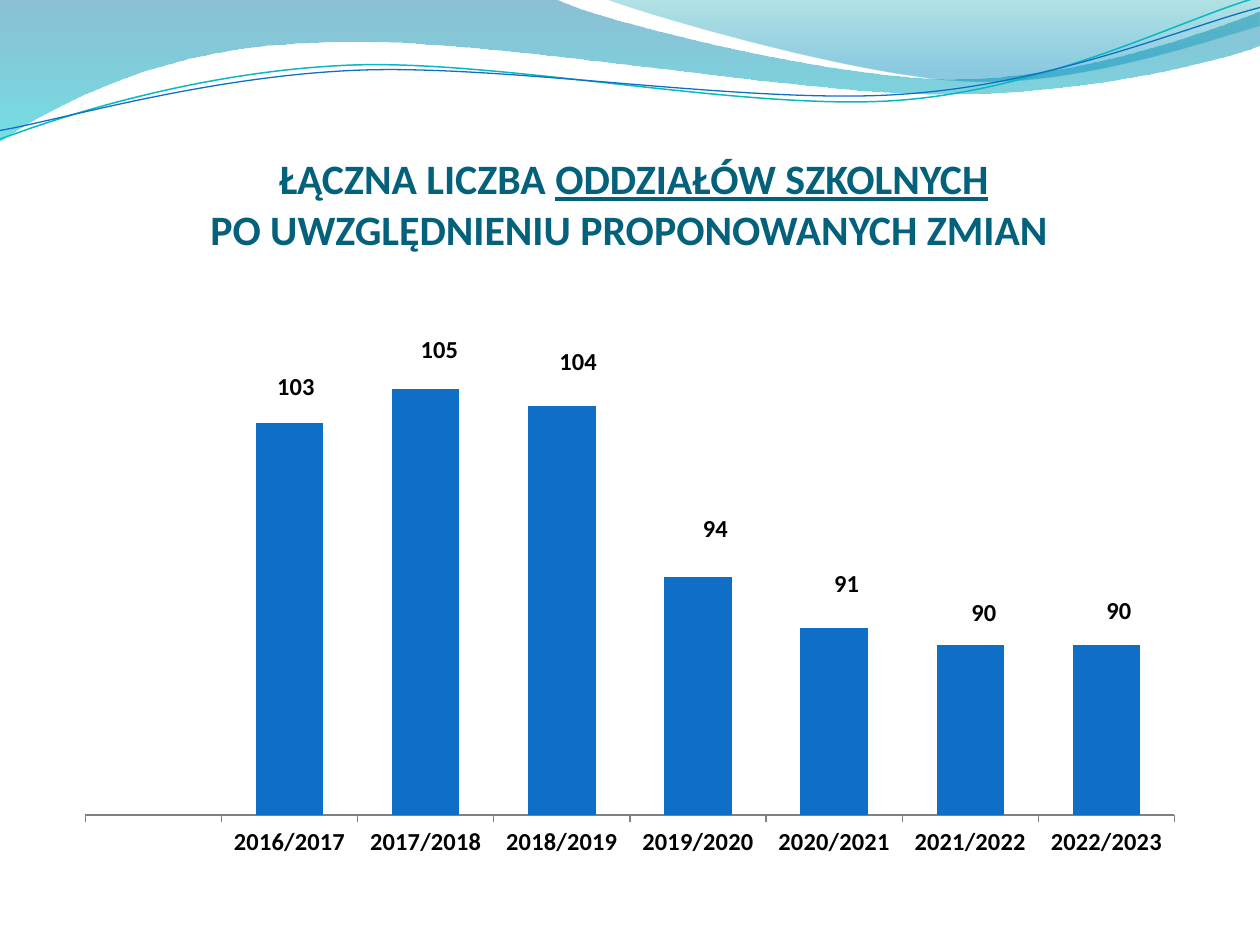
"""Build the slide with the column chart of school class counts."""
import math

from lxml import etree
from pptx import Presentation
from pptx import util as u
from pptx.chart.data import CategoryChartData
from pptx.dml.color import RGBColor
from pptx.enum import chart as ch, text
from pptx.oxml import parse_xml
from pptx.oxml.ns import nsdecls, qn


def rgb(value):
    return RGBColor.from_string(value)


def add_curve(s, points, steps, close=False):
    """Draw an outline; each step takes one point (line) or three (cubic curve)."""
    emu = [(u.Inches(x), u.Inches(y)) for x, y in points]
    builder = s.shapes.build_freeform(*emu[0])
    builder.add_line_segments(emu[1:], close=close)
    sp = builder.convert_to_shape()
    sp.shadow.inherit = False
    segments = list(sp._element.spPr.iter(qn("a:lnTo")))
    for step in steps:
        group, segments = segments[:step], segments[step:]
        if step == 3:
            cubic = etree.Element(qn("a:cubicBezTo"))
            group[0].addprevious(cubic)
            for segment in group:
                cubic.append(segment[0])
                segment.getparent().remove(segment)
    return sp


prs = Presentation()
prs.slide_width, prs.slide_height = u.Inches(10.04), u.Inches(7.5)
s = prs.slides.add_slide(prs.slide_layouts[5])

waves = [
    ([(0, 0), (4.42, -0.01), (4.78, 0.17), (6.66, 0.63), (7.61, 0.63),
      (8.57, 0.63), (9.62, 0.26), (10.04, 0.09), (10.05, 0.36),
      (9.87, 0.44), (8.73, 0.76), (7.49, 0.75), (6.24, 0.75), (3.83, 0.28), (2.58, 0.34),
      (1.3, 0.36), (0.46, 0.83), (-0.01, 1.13), (0, 0)],
     (1, 3, 3, 1, 3, 3, 3, 1), [(0, "0074A1", 45), (1, "00C6CF", 55)]),
    ([(4.81, -0.01), (5.11, 0.11), (6.85, 0.62), (7.72, 0.65),
      (8.59, 0.69), (9.65, 0.32), (10.04, 0.21), (10.04, 0), (4.81, -0.01)],
     (3, 3, 1, 1), [(0, "00A1A9", 30), (0.8, "008BBF", 45)]),
]
for points, steps, stops in waves:
    sp = add_curve(s, points[:-1], steps[:-1], close=True)
    sp.line.fill.background()
    sp.fill.gradient()
    sp.fill.gradient_angle = 270
    for stop, (position, color, _) in zip(sp.fill.gradient_stops, stops):
        stop.position = position
        stop.color.rgb = rgb(color)
    for clr, (_, _, opacity) in zip(sp._element.spPr.iter(qn("a:srgbClr")), stops):
        etree.SubElement(clr, qn("a:alpha")).set("val", str(opacity * 1000))

tilt = 2.7
cos, sin = math.cos(math.radians(tilt)), math.sin(math.radians(tilt))
lines = [
    ([(0, 1.11), (0.48, 0.93), (1.58, 0.57), (2.78, 0.52), (3.97, 0.47), (5.95, 0.89),
      (7.16, 0.8), (8.36, 0.71), (9.42, 0.15), (10.02, -0.02)], (5.01, 0.58), "0AB8BF", 0.85),
    ([(0, 1.04), (0.47, 0.96), (1.64, 0.61), (2.84, 0.56), (4.04, 0.51), (6, 0.84),
      (7.2, 0.75), (8.4, 0.67), (9.45, 0.21), (10.04, 0.06)], (5.02, 0.59), "0F6FC6", 0.75),
]
for points, (cx, cy), color, width in lines:
    level = [(cx + (x - cx) * cos - (y - cy) * sin, cy + (x - cx) * sin + (y - cy) * cos)
             for x, y in points]
    sp = add_curve(s, level, (3, 3, 3))
    sp.rotation = 360 - tilt
    sp.fill.background()
    sp.line.color.rgb = rgb(color)
    sp.line.width = u.Pt(width)

title = s.shapes.title
s.shapes._spTree.append(title._element)
title.left, title.top = u.Inches(0.53), u.Inches(0.92)
title.width, title.height = u.Inches(9.04), u.Inches(1.1)
tf = title.text_frame
tf.word_wrap = True
tf.auto_size = text.MSO_AUTO_SIZE.NONE
tf.vertical_anchor = text.MSO_ANCHOR.BOTTOM
tf.margin_left = tf.margin_right = tf.margin_bottom = 0
tf.margin_top = u.Inches(0.05)
p = tf.paragraphs[0]
p.alignment = text.PP_ALIGN.CENTER
for words, underline in [("ŁĄCZNA LICZBA ", False), ("ODDZIAŁÓW SZKOLNYCH", True),
                         ("\n", False), ("PO UWZGLĘDNIENIU PROPONOWANYCH ZMIAN ", False)]:
    if words == "\n":
        p.add_line_break()
        continue
    r = p.add_run()
    r.text = words
    r.font.name, r.font.size, r.font.bold = "Calibri", u.Pt(24), True
    r.font.underline = underline
    r.font.color.rgb = rgb("04617B")

data = CategoryChartData()
data.categories = [""] + [f"{year}/{year + 1}" for year in range(2016, 2023)]
data.add_series("Series 1", [None, 103, 105, 104, 94, 91, 90, 90])
chart_width, chart_height = 9.04, 4.58
chart = s.shapes.add_chart(ch.XL_CHART_TYPE.COLUMN_CLUSTERED, u.Inches(0.5), u.Inches(2.33),
                           u.Inches(chart_width), u.Inches(chart_height), data).chart
chart.has_legend = chart.has_title = False
chart.font.name, chart.font.size = "Calibri", u.Pt(10)
chart.font.color.rgb = rgb("000000")

years = chart.category_axis
years.major_tick_mark = ch.XL_TICK_MARK.OUTSIDE
years.tick_labels.font.size, years.tick_labels.font.bold = u.Pt(14), True
years.format.line.color.rgb = rgb("808080")
counts = chart.value_axis
counts.minimum_scale, counts.maximum_scale = 80, 110
counts.has_major_gridlines = counts.visible = False

plot = chart.plots[0]
plot.gap_width, plot.vary_by_categories = 102, False
series = plot.series[0]
series.format.fill.solid()
series.format.fill.fore_color.rgb = rgb("0F6FC6")

labels = series.data_labels
labels.show_value = True
labels.position = ch.XL_LABEL_POSITION.OUTSIDE_END
shifts = [(0.05, -0.13), (0.11, -0.15), (0.13, -0.19), (0.14, -0.22),
          (0.1, -0.19), (0.11, -0.09), (0.1, -0.11)]
for i in range(1, 8):
    label = series.points[i].data_label
    label.position = ch.XL_LABEL_POSITION.OUTSIDE_END
    for font in (labels.font, label.font):
        font.name, font.size, font.bold = "Calibri", u.Pt(14), True
        font.color.rgb = rgb("000000")
for dlbl, (dx, dy) in zip(series._element.iter(qn("c:dLbl")), shifts):
    dlbl.find(qn("c:idx")).addnext(parse_xml(
        f'<c:layout {nsdecls("c")}><c:manualLayout><c:x val="{dx / chart_width}"/>'
        f'<c:y val="{dy / chart_height}"/></c:manualLayout></c:layout>'))

dlbls = series._element.find(qn("c:dLbls"))
for leader in dlbls.findall(qn("c:showLeaderLines")):
    dlbls.remove(leader)
dlbls.append(parse_xml(f'<c:showLeaderLines {nsdecls("c")} val="0"/>'))
dlbls.append(parse_xml(
    f'<c:extLst {nsdecls("c")}><c:ext uri="{{CE6537A1-D6FC-4f65-9D91-7224C49458BB}}" '
    'xmlns:c15="http://schemas.microsoft.com/office/drawing/2012/chart">'
    '<c15:showLeaderLines val="0"/></c:ext></c:extLst>'))

plot_area = chart._chartSpace.chart.plotArea
for layout in plot_area.findall(qn("c:layout")):
    plot_area.remove(layout)
plot_area.insert(0, parse_xml(
    f'<c:layout {nsdecls("c")}><c:manualLayout><c:layoutTarget val="inner"/>'
    '<c:xMode val="edge"/><c:yMode val="edge"/><c:x val="0.02"/><c:y val="0.02"/>'
    '<c:w val="0.96"/><c:h val="0.89"/></c:manualLayout></c:layout>'))

prs.save("out.pptx")
